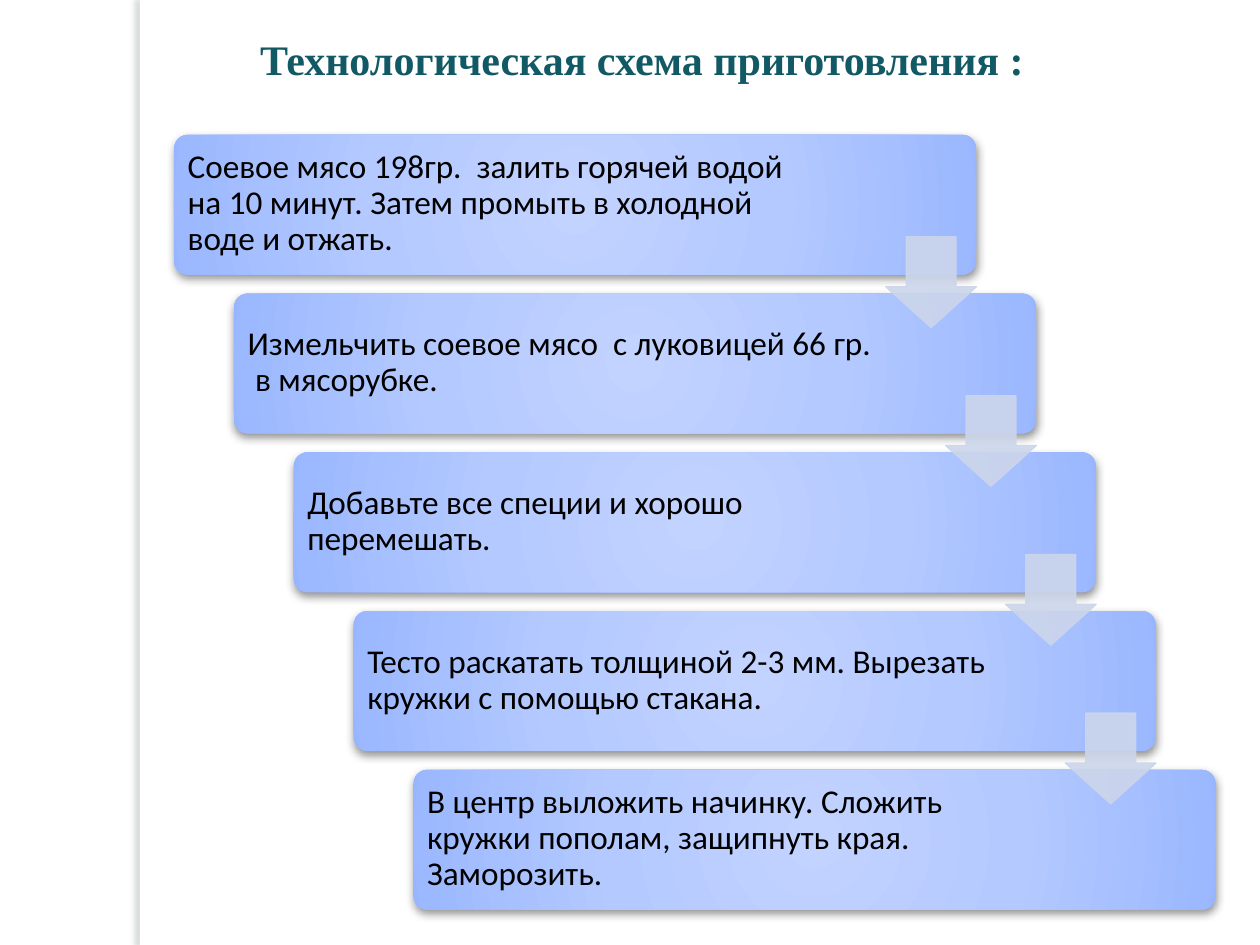
"""Build the slide with a five-step staircase of cooking instructions."""
from lxml.etree import SubElement
from pptx import Presentation
from pptx.dml.color import RGBColor
from pptx.enum.shapes import MSO_SHAPE
from pptx.enum.text import MSO_ANCHOR, MSO_AUTO_SIZE, PP_ALIGN
from pptx.oxml import parse_xml
from pptx.oxml.ns import nsdecls, qn
from pptx.util import Inches, Pt

COLORS = {
    "background": "FFFFFF",
    "edge_shadow": "6C7A7C",
    "title": "115964",
    "text": "000000",
    "step_shadow": "000000",
    "arrow": "CCD5EA",
}
GRADIENT = [(0, "C2D3FF"), (50, "B4C9FF"), (97, "9CB9FF"), (100, "95B4FF")]
STEPS = [
    "Соевое мясо 198гр.  залить горячей водой на 10 минут. Затем промыть в холодной воде и отжать.",
    "Измельчить соевое мясо  с луковицей 66 гр.  в мясорубке.",
    "Добавьте все специи и хорошо перемешать.",
    "Тесто раскатать толщиной 2-3 мм. Вырезать кружки с помощью стакана.",
    "В центр выложить начинку. Сложить кружки пополам, защипнуть края. Заморозить.",
]
STEP_LEFT, STEP_TOP = 1.38, 1.07
STEP_WIDTH, STEP_HEIGHT = 6.37, 1.11
SHIFT_RIGHT, SHIFT_DOWN = 0.475, 1.26
ARROW_SIZE = 0.72

presentation = Presentation()
presentation.slide_width = Inches(10)
presentation.slide_height = Inches(7.5)
slide = presentation.slides.add_slide(presentation.slide_layouts[6])


def add_text(text, left, top, width, height, font, size, color, bold=False,
             align=PP_ALIGN.LEFT, inset=None, line_spacing=None, grow=False):
    box = slide.shapes.add_textbox(Inches(left), Inches(top), Inches(width), Inches(height))
    frame = box.text_frame
    frame.word_wrap = True
    frame.vertical_anchor = MSO_ANCHOR.MIDDLE
    frame.auto_size = MSO_AUTO_SIZE.SHAPE_TO_FIT_TEXT if grow else MSO_AUTO_SIZE.NONE
    if inset is not None:
        frame.margin_left = frame.margin_right = Inches(inset)
        frame.margin_top = frame.margin_bottom = Inches(inset)
    paragraph = frame.paragraphs[0]
    paragraph.alignment = align
    paragraph.line_spacing = line_spacing
    run = paragraph.add_run()
    run.text = text
    run.font.name = font
    run.font.size = Pt(size)
    run.font.bold = bold
    run.font.color.rgb = RGBColor.from_string(color)


def add_shape(kind, left, top, width, height, color, shadow=None):
    shape = slide.shapes.add_shape(kind, Inches(left), Inches(top), Inches(width), Inches(height))
    shape.shadow.inherit = False
    shape.fill.solid()
    shape.fill.fore_color.rgb = RGBColor.from_string(color)
    shape.line.fill.background()
    if shadow:
        shadow_color, opacity, blur, distance, direction = shadow
        effects = shape._element.spPr.find(qn("a:effectLst"))
        outer = SubElement(effects, qn("a:outerShdw"), blurRad=str(Pt(blur)), dist=str(Pt(distance)),
                           dir=str(direction * 60000), algn="ctr", rotWithShape="0")
        tint = SubElement(outer, qn("a:srgbClr"), val=shadow_color)
        SubElement(tint, qn("a:alpha"), val=str(opacity * 1000))
    return shape


add_shape(MSO_SHAPE.RECTANGLE, 1.11, 0, 0.08, 7.5, COLORS["background"],
          shadow=(COLORS["edge_shadow"], 25, 3, 3, 180))
add_text("Технологическая схема приготовления :", 1.61, 0.22, 6.97, 0.5,
         font="Times New Roman", size=24, color=COLORS["title"], bold=True,
         align=PP_ALIGN.CENTER, grow=True)

stops = "".join(f'<a:gs pos="{position * 1000}"><a:srgbClr val="{color}"/></a:gs>'
                for position, color in GRADIENT)
gradient_xml = (f'<a:gradFill {nsdecls("a")} rotWithShape="1"><a:gsLst>{stops}</a:gsLst>'
                '<a:path path="circle"><a:fillToRect l="50000" t="50000" r="50000" b="50000"/>'
                '</a:path></a:gradFill>')

for index, step in enumerate(STEPS):
    left = STEP_LEFT + index * SHIFT_RIGHT
    top = STEP_TOP + index * SHIFT_DOWN
    card = add_shape(MSO_SHAPE.ROUNDED_RECTANGLE, left, top, STEP_WIDTH, STEP_HEIGHT,
                     GRADIENT[0][1], shadow=(COLORS["step_shadow"], 43, 5, 2, 90))
    card.adjustments[0] = 0.1
    properties = card._element.spPr
    properties.replace(properties.find(qn("a:solidFill")), parse_xml(gradient_xml))
    add_text(step, left + 0.03, top + 0.03, 5.11 if index else 5.04, 1.04,
             font="Calibri", size=19, color=COLORS["text"], inset=0.08, line_spacing=0.9)

for index in range(len(STEPS) - 1):
    left = STEP_LEFT + index * SHIFT_RIGHT + STEP_WIDTH - ARROW_SIZE
    top = STEP_TOP + index * SHIFT_DOWN + 0.81
    arrow = add_shape(MSO_SHAPE.DOWN_ARROW, left, top, ARROW_SIZE, ARROW_SIZE, COLORS["arrow"])
    arrow.adjustments[0] = 0.45
    arrow.adjustments[1] = 0.55
    arrow.adjustments[0], arrow.adjustments[1] = 0.55, 0.45
    arrow.line.color.rgb = RGBColor.from_string(COLORS["arrow"])
    arrow.line.width = Pt(0.75)
    for tint in arrow._element.spPr.iter(qn("a:srgbClr")):
        SubElement(tint, qn("a:alpha"), val="90000")

presentation.save("out.pptx")
